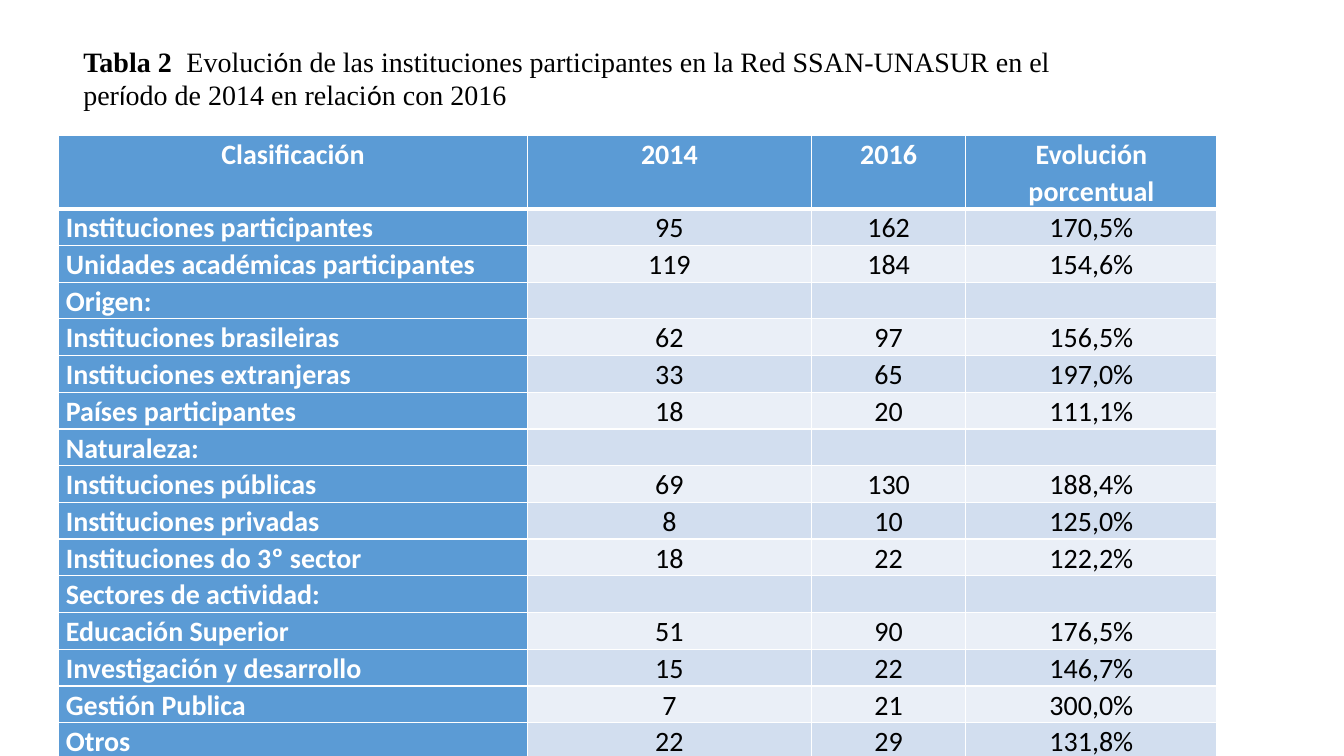
from dataclasses import dataclass
from itertools import groupby

from lxml.etree import SubElement
from pptx import Presentation
from pptx.dml.color import RGBColor
from pptx.enum.text import MSO_ANCHOR, PP_ALIGN
from pptx.oxml.ns import qn
from pptx.slide import Slide
from pptx.table import _Cell
from pptx.text.text import _Paragraph
from pptx.util import Cm, Pt


@dataclass(frozen=True)
class Theme:
    heading: str = "5B9BD5"
    band_dark: str = "D2DEEF"
    band_light: str = "EAEFF7"
    white: str = "FFFFFF"
    black: str = "000000"
    table_font: str = "Calibri"
    caption_font: str = "Times New Roman"
    text_size: int = 20
    thin_border: int = 1
    header_border: int = 3


@dataclass(frozen=True)
class Row:
    label: str
    year_2014: str = ""
    year_2016: str = ""
    evolution: str = ""

    def texts(self) -> list[str]:
        return [self.label, self.year_2014, self.year_2016, self.evolution]


THEME = Theme()
COLUMN_WIDTHS = (11.81, 7.16, 3.89, 6.33)
ROW_HEIGHT = 0.92
CAPTION_LABEL = "Tabla 2"
CAPTION = (
    "Evolución de las instituciones participantes en la Red SSAN-UNASUR "
    "en el período de 2014 en relación con 2016"
)
ROWS = (
    Row("Clasificación", "2014", "2016", "Evolución porcentual"),
    Row("Instituciones participantes", "95", "162", "170,5%"),
    Row("Unidades académicas participantes", "119", "184", "154,6%"),
    Row("Origen:"),
    Row("Instituciones brasileiras", "62", "97", "156,5%"),
    Row("Instituciones extranjeras", "33", "65", "197,0%"),
    Row("Países participantes", "18", "20", "111,1%"),
    Row("Naturaleza:"),
    Row("Instituciones públicas", "69", "130", "188,4%"),
    Row("Instituciones privadas", "8", "10", "125,0%"),
    Row("Instituciones do 3º sector", "18", "22", "122,2%"),
    Row("Sectores de actividad:"),
    Row("Educación Superior", "51", "90", "176,5%"),
    Row("Investigación y desarrollo", "15", "22", "146,7%"),
    Row("Gestión Publica", "7", "21", "300,0%"),
    Row("Otros", "22", "29", "131,8%"),
)


def set_borders(cell: _Cell, top: int, bottom: int) -> None:
    """Draw white borders; must run before the cell gets its fill."""
    properties = cell._tc.get_or_add_tcPr()
    thin = THEME.thin_border
    for side, width in (("L", thin), ("R", thin), ("T", top), ("B", bottom)):
        line = SubElement(properties, qn(f"a:ln{side}"), w=str(Pt(width)))
        fill = SubElement(line, qn("a:solidFill"))
        SubElement(fill, qn("a:srgbClr"), val=THEME.white)


def fill_cell(cell: _Cell, text: str, row: int, column: int) -> None:
    is_heading = row == 0 or column == 0
    band = THEME.band_dark if row % 2 else THEME.band_light
    set_borders(
        cell,
        top=THEME.header_border if row == 1 else THEME.thin_border,
        bottom=THEME.header_border if row == 0 else THEME.thin_border,
    )
    cell.fill.solid()
    cell.fill.fore_color.rgb = RGBColor.from_string(THEME.heading if is_heading else band)
    cell.margin_left = cell.margin_right = Cm(0.18)
    cell.margin_top = cell.margin_bottom = 0

    cell.text_frame.text = text
    paragraph = cell.text_frame.paragraphs[0]
    paragraph.line_spacing = 1.07
    paragraph.alignment = PP_ALIGN.LEFT if row and column == 0 else PP_ALIGN.CENTER
    paragraph.font.size = Pt(THEME.text_size)
    for run in paragraph.runs:
        run.font.name = THEME.table_font
        run.font.size = Pt(THEME.text_size)
        run.font.bold = is_heading
        run.font.color.rgb = RGBColor.from_string(THEME.white if is_heading else THEME.black)


def add_evolution_table(slide: Slide) -> None:
    table = slide.shapes.add_table(
        len(ROWS), len(COLUMN_WIDTHS), Cm(1.48), Cm(3.41),
        Cm(sum(COLUMN_WIDTHS)), Cm(ROW_HEIGHT * (len(ROWS) + 1)),
    ).table
    table.first_col = True
    for column, width in zip(table.columns, COLUMN_WIDTHS):
        column.width = Cm(width)
    for row_index, row in enumerate(ROWS):
        table.rows[row_index].height = Cm(ROW_HEIGHT if row_index else 2 * ROW_HEIGHT)
        for column_index, text in enumerate(row.texts()):
            fill_cell(table.cell(row_index, column_index), text, row_index, column_index)


def add_caption_run(paragraph: _Paragraph, text: str, font: str, bold: bool = False) -> None:
    run = paragraph.add_run()
    run.text = text
    run.font.name = font
    run.font.size = Pt(THEME.text_size)
    run.font.bold = bold
    run.font.color.rgb = RGBColor.from_string(THEME.black)


def add_caption(slide: Slide) -> None:
    """Add the table title, whose accented letters take the table font."""
    box = slide.shapes.add_textbox(Cm(1.85), Cm(0.91), Cm(26.67), Cm(2.82))
    text_frame = box.text_frame
    text_frame.word_wrap = True
    text_frame.vertical_anchor = MSO_ANCHOR.TOP
    text_frame.margin_top = Cm(0.2)
    paragraph = text_frame.paragraphs[0]
    tabs = SubElement(paragraph._p.get_or_add_pPr(), qn("a:tabLst"))
    SubElement(tabs, qn("a:tab"), pos=str(Cm(2.6)), algn="l")

    add_caption_run(paragraph, CAPTION_LABEL + "\t", THEME.caption_font, bold=True)
    for accented, letters in groupby(CAPTION, key=lambda letter: letter in "óí"):
        font = THEME.table_font if accented else THEME.caption_font
        add_caption_run(paragraph, "".join(letters), font)


def main() -> None:
    presentation = Presentation()
    presentation.slide_width = Cm(33.87)
    presentation.slide_height = Cm(19.05)
    slide = presentation.slides.add_slide(presentation.slide_layouts[6])
    add_evolution_table(slide)
    add_caption(slide)
    presentation.save("out.pptx")


if __name__ == "__main__":
    main()
